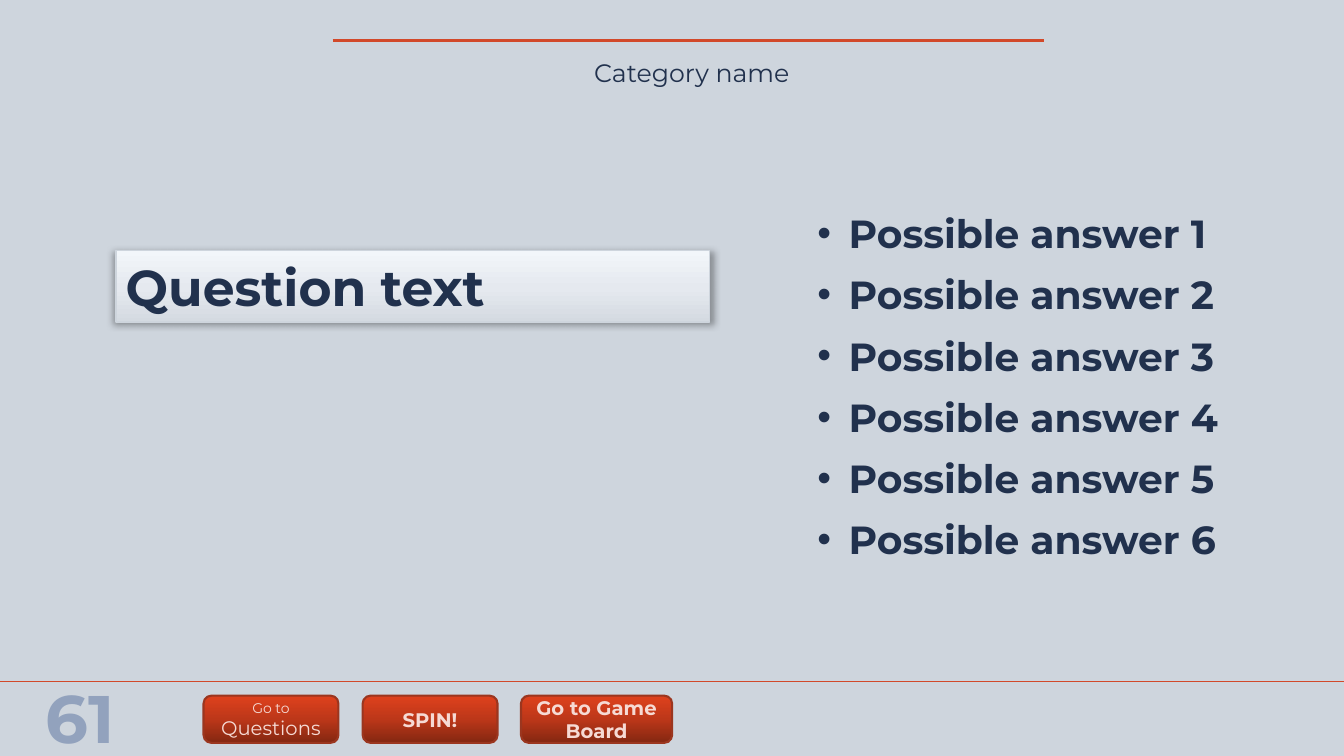
from copy import deepcopy
from dataclasses import dataclass

from lxml import etree
from pptx import Presentation, util as u
from pptx.dml.color import RGBColor
from pptx.enum import shapes, text
from pptx.oxml.ns import qn

NAVY, RED, PAGE, BLUSH = "21314D", "D2492A", "CED5DD", "F6DAD4"
RED_GRADIENT = ((0, "842711"), (50, "BC3719"), (100, "DF411D"))
SILVER_GRADIENT = ((0, "D4DAE1"), (48, "E5E9EF"), (100, "F2F6FA"))
CENTER, LEFT = text.PP_ALIGN.CENTER, text.PP_ALIGN.LEFT


@dataclass
class Part:
    """A block of text; each line holds (wording, size) pieces split by line breaks."""
    left: float
    top: float
    width: float
    height: float
    lines: list
    color: str = NAVY
    bold: bool = True
    align: int = CENTER


@dataclass
class Rule:
    start: tuple
    end: tuple
    weight: float


def rgb(value: str) -> RGBColor:
    return RGBColor.from_string(value)


def frame_of(part: Part) -> tuple:
    return tuple(u.Cm(v) for v in (part.left, part.top, part.width, part.height))


def write(shape, part: Part, anchor=text.MSO_ANCHOR.TOP) -> None:
    frame = shape.text_frame
    frame.word_wrap, frame.vertical_anchor = True, anchor
    for index, pieces in enumerate(part.lines):
        paragraph = frame.paragraphs[0] if index == 0 else frame.add_paragraph()
        paragraph.alignment = part.align
        for position, (wording, size) in enumerate(pieces):
            if position:
                paragraph.add_line_break()
                break_size = pieces[position - 1][1]
                etree.SubElement(paragraph._p[-1], qn("a:rPr"), sz=str(break_size * 100))
            run = paragraph.add_run()
            run.text = wording
            values = {"name": "Montserrat", "size": u.Pt(size), "bold": part.bold}
            for name, value in values.items():
                setattr(run.font, name, value)
            run.font.color.rgb = rgb(part.color)


def add_text(slide, part: Part):
    box = slide.shapes.add_textbox(*frame_of(part))
    write(box, part)
    return box


def add_panel(slide, part: Part, kind, stops: tuple, outline: str, weight: float, anchor):
    panel = slide.shapes.add_shape(kind, *frame_of(part))
    panel.shadow.inherit = False
    panel.fill.gradient()
    panel.fill.gradient_angle = 90
    stop_list = panel._element.spPr.find(qn("a:gradFill")).find(qn("a:gsLst"))
    stop_list.append(deepcopy(stop_list[0]))
    for stop, (position, color) in zip(panel.fill.gradient_stops, stops):
        stop.position = position / 100
        stop.color.rgb = rgb(color)
    panel.line.color.rgb = rgb(outline)
    panel.line.width = u.Pt(weight)
    write(panel, part, anchor)
    return panel


def add_shadow(panel) -> None:
    effects = panel._element.spPr.find(qn("a:effectLst"))
    shadow = etree.SubElement(effects, qn("a:outerShdw"), blurRad=str(u.Pt(5)),
                              dist=str(u.Pt(1)), dir="5400000", sx="101000",
                              algn="t", rotWithShape="0")
    color = etree.SubElement(shadow, qn("a:srgbClr"), val="000000")
    etree.SubElement(color, qn("a:alpha"), val="32000")


def add_rule(slide, rule: Rule) -> None:
    ends = [u.Cm(v) for v in rule.start + rule.end]
    line = slide.shapes.add_connector(shapes.MSO_CONNECTOR.STRAIGHT, *ends)
    line.line.color.rgb = rgb(RED)
    line.line.width = u.Pt(rule.weight)
    etree.SubElement(line._element.spPr, qn("a:effectLst"))


def add_bullets(box) -> None:
    for paragraph in box.text_frame.paragraphs:
        properties = paragraph._p.get_or_add_pPr()
        properties.set("marL", str(u.Cm(0.79)))
        properties.set("indent", str(-u.Cm(0.79)))
        paragraph.line_spacing = 1.3
        etree.SubElement(properties, qn("a:buFont"), typeface="Arial")
        etree.SubElement(properties, qn("a:buChar"), char="•")


RULES = [Rule((33.87, 17.17), (0, 17.17), 1), Rule((8.38, 1.02), (26.31, 1.02), 2)]
NUMBER = Part(0.53, 16.92, 3, 2.31, [[("61", 48)]], "92A2BD")
CATEGORY = Part(8.53, 1.32, 17.81, 1.02, [[("Category name", 18)]], bold=False)
QUESTION = Part(2.92, 6.32, 14.96, 1.8, [[("Question text", 36)]], align=LEFT)
ANSWERS = Part(20.35, 4.8, 11.4, 9.45,
               [[(f"Possible answer {n}", 28)] for n in range(1, 7)], align=LEFT)
BUTTON_TOP, BUTTON_HEIGHT = 17.53, 1.19
BUTTONS = [
    Part(5.13, BUTTON_TOP, 3.4, BUTTON_HEIGHT, [[("Go to", 10), ("Questions", 14)]], BLUSH, False),
    Part(9.14, BUTTON_TOP, 3.4, BUTTON_HEIGHT, [[("SPIN!", 14)]], BLUSH),
    Part(13.13, BUTTON_TOP, 3.81, BUTTON_HEIGHT, [[("Go to Game Board", 14)]], BLUSH),
]


def main() -> None:
    deck = Presentation()
    deck.slide_width, deck.slide_height = u.Cm(33.87), u.Cm(19.05)
    slide = deck.slides.add_slide(deck.slide_layouts[6])
    slide.background.fill.solid()
    slide.background.fill.fore_color.rgb = rgb(PAGE)

    # Rules, slide number and category
    for rule in RULES:
        add_rule(slide, rule)
    add_text(slide, NUMBER)
    add_text(slide, CATEGORY)

    # Question and its possible answers
    question = add_panel(slide, QUESTION, shapes.MSO_SHAPE.RECTANGLE, SILVER_GRADIENT,
                         PAGE, 1, text.MSO_ANCHOR.TOP)
    add_shadow(question)
    add_bullets(add_text(slide, ANSWERS))

    # Navigation buttons
    for button in BUTTONS:
        add_panel(slide, button, shapes.MSO_SHAPE.ROUNDED_RECTANGLE, RED_GRADIENT,
                  "9B361F", 1.5, text.MSO_ANCHOR.MIDDLE)

    deck.save("out.pptx")


if __name__ == "__main__":
    main()
